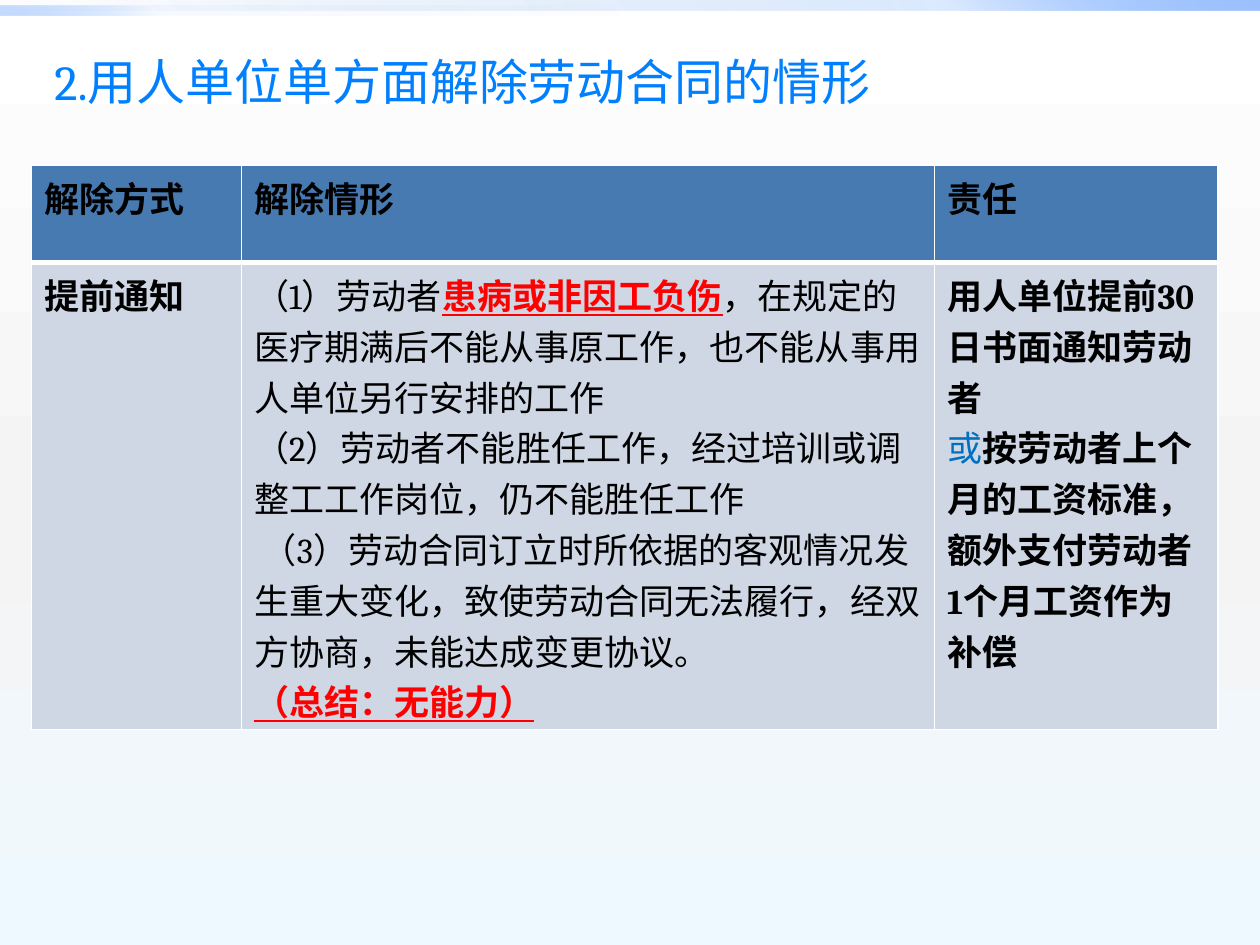
from dataclasses import dataclass

from lxml import etree
from pptx import Presentation
from pptx.dml.color import RGBColor
from pptx.enum.shapes import MSO_SHAPE
from pptx.oxml.ns import qn
from pptx.util import Pt

RECTANGLE = MSO_SHAPE.RECTANGLE


@dataclass(frozen=True)
class Theme:
    """Colours, type sizes and font of the slide."""
    font: str = "Cambria"
    title_size: int = 28
    table_size: int = 20
    title: str = "0080FF"
    text: str = "000000"
    alert: str = "FF0000"
    accent: str = "0070C0"
    header_fill: str = "477AB1"
    body_fill: str = "CFD7E4"
    border: str = "FFFFFF"
    background: tuple = ((0, "FFFFFF", 100), (55, "F4F4F4", 100), (100, "EEF9FF", 100))
    top_band: tuple = ((0, "0058B7", 0), (75, "4F95FF", 20), (100, "9EC2FF", 100))
    left_band: tuple = ((0, "0058B7", 0), (75, "4F95FF", 5), (100, "9EC2FF", 60))


THEME = Theme()
PLAIN = {"bold": False}
BOLD = {"bold": True}
ALERT = {"bold": True, "underline": True, "color": THEME.alert}
ACCENT = {"bold": False, "color": THEME.accent}

TITLE = "2.用人单位单方面解除劳动合同的情形"
COLUMN_WIDTHS = (120, 396, 162)
ROW_HEIGHTS = (55.5, 267)
HEADER = [[[(label, BOLD)]] for label in ("解除方式", "解除情形", "责任")]
BODY = [
    [[("提前通知", BOLD)]],
    [
        [("（1）劳动者", PLAIN), ("患病或非因工负伤", ALERT),
         ("，在规定的医疗期满后不能从事原工作，也不能从事用人单位另行安排的工作", PLAIN)],
        [("（2）劳动者不能胜任工作，经过培训或调整工工作岗位，仍不能胜任工作", PLAIN)],
        [(" （3）劳动合同订立时所依据的客观情况发生重大变化，致使劳动合同无法履行，"
          "经双方协商，未能达成变更协议。", PLAIN)],
        [("（总结：无能力）", ALERT)],
    ],
    [
        [("用人单位提前30日书面通知劳动者", BOLD)],
        [("或", ACCENT),
         ("按劳动者上个月的工资标准，额外支付劳动者1个月工资作为补偿", BOLD)],
    ],
]


def add_color(parent, color, opacity=100):
    """Append an RGB colour with opacity in percent to an XML element."""
    node = etree.SubElement(parent, qn("a:srgbClr"), val=color)
    if opacity < 100:
        etree.SubElement(node, qn("a:alpha"), val=str(opacity * 1000))


def fill_gradient(fill, element, stops, angle):
    """Give a fill found inside an element a gradient at a counter-clockwise angle."""
    fill.gradient()
    fill.gradient_angle = angle
    stop_list = element.find(".//" + qn("a:gsLst"))
    for old_stop in list(stop_list):
        stop_list.remove(old_stop)
    for position, color, opacity in stops:
        stop = etree.SubElement(stop_list, qn("a:gs"), pos=str(position * 1000))
        add_color(stop, color, opacity)


def add_bands(slide, left, top, width):
    """Draw the two overlapping decorative bands along the top edge."""
    height = 6
    bands = ((0, width, THEME.top_band, 45), (height / 2, width / 2, THEME.left_band, 225))
    for offset, band_width, stops, angle in bands:
        band = slide.shapes.add_shape(
            RECTANGLE, Pt(left), Pt(top + offset), Pt(band_width), Pt(height))
        band.shadow.inherit = False
        band.line.fill.background()
        fill_gradient(band.fill, band.element, stops, angle)


def write_run(paragraph, text, size, color=THEME.text, **formats):
    """Append a formatted run to a paragraph."""
    run = paragraph.add_run()
    run.text = text
    values = {"name": THEME.font, "size": Pt(size), **formats}
    for name, value in values.items():
        setattr(run.font, name, value)
    run.font.color.rgb = RGBColor.from_string(color)


def add_title(slide, left, top, width, height):
    """Place the slide title."""
    frame = slide.shapes.add_textbox(Pt(left), Pt(top), Pt(width), Pt(height)).text_frame
    frame.word_wrap = True
    write_run(frame.paragraphs[0], TITLE, THEME.title_size, THEME.title)


def set_borders(cell, widths):
    """Draw the cell borders, given in the order left, right, top, bottom."""
    properties = cell._tc.get_or_add_tcPr()
    for index, (side, width) in enumerate(zip("LRTB", widths)):
        line = etree.Element(qn(f"a:ln{side}"), w=str(Pt(width)))
        add_color(etree.SubElement(line, qn("a:solidFill")), THEME.border)
        properties.insert(index, line)


def write_cell(cell, paragraphs, fill, borders):
    """Fill one table cell with its paragraphs, colour and borders."""
    cell.fill.solid()
    cell.fill.fore_color.rgb = RGBColor.from_string(fill)
    set_borders(cell, borders)
    frame = cell.text_frame
    for index, runs in enumerate(paragraphs):
        paragraph = frame.add_paragraph() if index else frame.paragraphs[0]
        for text, formats in runs:
            write_run(paragraph, text, THEME.table_size, **formats)


def add_dismissal_table(slide, left, top):
    """Place the table of dismissal methods, cases and duties."""
    table = slide.shapes.add_table(
        len(ROW_HEIGHTS), len(COLUMN_WIDTHS), Pt(left), Pt(top),
        Pt(sum(COLUMN_WIDTHS)), Pt(sum(ROW_HEIGHTS))).table
    for column, width in zip(table.columns, COLUMN_WIDTHS):
        column.width = Pt(width)
    rows = ((HEADER, THEME.header_fill, (1, 1, 1, 3)),
            (BODY, THEME.body_fill, (1, 1, 3, 1)))
    for row, height, (contents, fill, borders) in zip(table.rows, ROW_HEIGHTS, rows):
        row.height = Pt(height)
        for cell, paragraphs in zip(row.cells, contents):
            write_cell(cell, paragraphs, fill, borders)


def main():
    """Build and save the presentation."""
    presentation = Presentation()
    presentation.slide_width, presentation.slide_height = Pt(720), Pt(540)
    slide = presentation.slides.add_slide(presentation.slide_layouts[6])
    fill_gradient(slide.background.fill, slide.element, THEME.background, 270)
    add_bands(slide, 0, 0, 720)
    add_title(slide, 24, 26, 675, 357)
    add_dismissal_table(slide, 18, 94.5)
    presentation.save("out.pptx")


if __name__ == "__main__":
    main()
